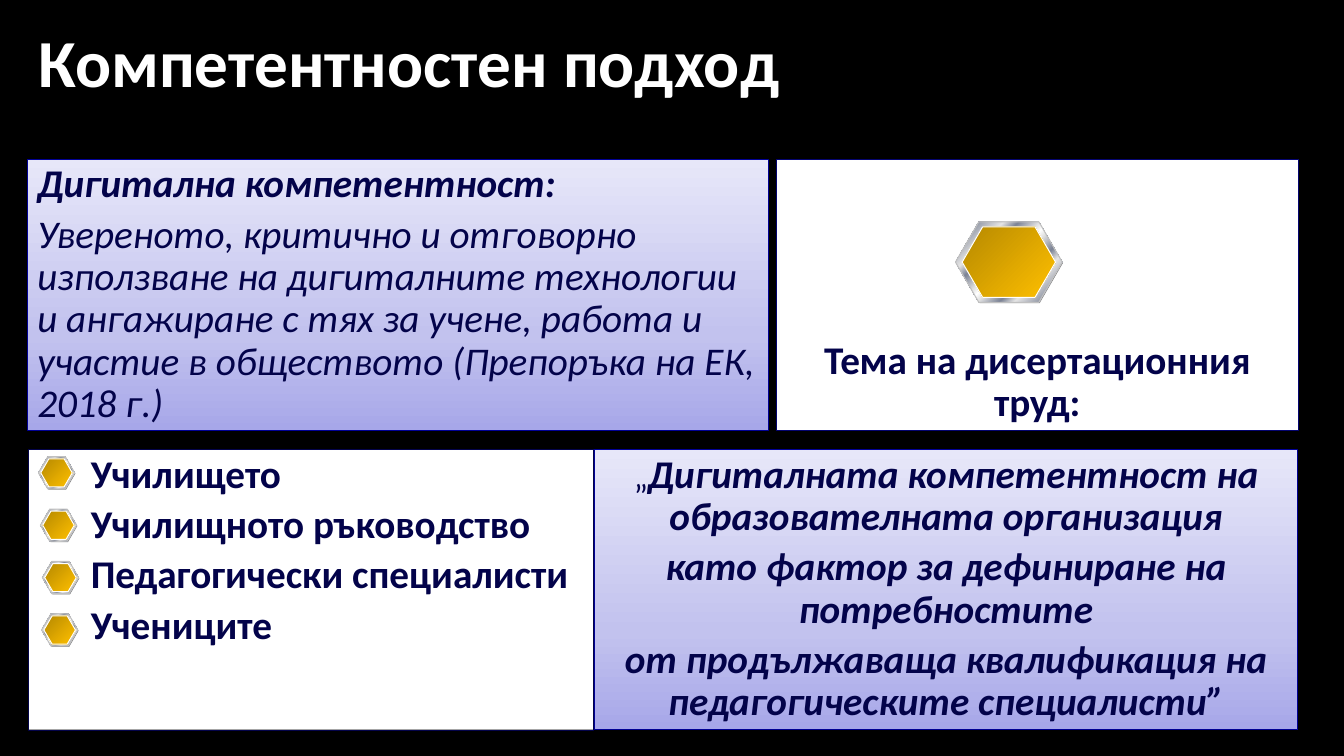
from lxml import etree
from pptx import Presentation
from pptx.dml.color import RGBColor
from pptx.enum.shapes import MSO_SHAPE
from pptx.enum.text import MSO_ANCHOR, PP_ALIGN
from pptx.oxml.ns import qn
from pptx.util import Cm, Pt

RECTANGLE, HEXAGON = MSO_SHAPE.RECTANGLE, MSO_SHAPE.HEXAGON
TOP, BOTTOM = MSO_ANCHOR.TOP, MSO_ANCHOR.BOTTOM
LEFT, CENTER = PP_ALIGN.LEFT, PP_ALIGN.CENTER

FONT = "Calibri"
COLORS = {
    "black": "000000", "white": "FFFFFF", "text": "03034A",
    "lilac_edge": "010195", "theme_edge": "040470",
    "rim_edge": "C0C0C0", "rim_shade": "808080",
}
# Gradient stops: (position in percent, colour)
LILAC = [(0, "A7A7E9"), (35, "C2C2EE"), (100, "E7E7F9")]
GOLD = [(0, "B68900"), (100, "FFC000")]
SILVER = [(0, "E6E6E6"), (8, "7D8496"), (26, "E6E6E6"), (34, "7D8496"),
          (46, "E6E6E6"), (50, "FFFFFF"), (54, "E6E6E6"), (66, "7D8496"),
          (74, "E6E6E6"), (92, "7D8496"), (100, "E6E6E6")]


def rgb(name):
    return RGBColor.from_string(COLORS[name])


def add_color(parent, value):
    return etree.SubElement(parent, qn("a:srgbClr"), val=value)


def fill_gradient(shape, stops, angle):
    """Angle runs counter-clockwise, in degrees."""
    shape.fill.gradient()
    shape.fill.gradient_angle = angle
    stop_list = shape._element.spPr.find(".//" + qn("a:gsLst"))
    for stop in list(stop_list):
        stop_list.remove(stop)
    for position, color in stops:
        stop = etree.SubElement(stop_list, qn("a:gs"), pos=str(position * 1000))
        add_color(stop, color)


def add_soft_shadow(shape):
    effects = shape._element.spPr.find(qn("a:effectLst"))
    shadow = etree.SubElement(
        effects, qn("a:outerShdw"), blurRad=str(Pt(3.1)), dist=str(Pt(1.6)),
        dir="5400000", rotWithShape="0")
    etree.SubElement(add_color(shadow, COLORS["black"]), qn("a:alpha"), val="38000")


def add_outline(shape, color, width):
    shape.line.color.rgb = rgb(color)
    shape.line.width = Pt(width)


def format_font(font, size, color, bold, italic=False):
    font.name = FONT
    font.size = Pt(size)
    font.color.rgb = rgb(color)
    font.bold = bold
    font.italic = italic


def add_panel(slide, left, top, width, height, edge, edge_width, lilac=False):
    panel = slide.shapes.add_shape(
        RECTANGLE, Cm(left), Cm(top), Cm(width), Cm(height))
    panel.shadow.inherit = False
    add_outline(panel, edge, edge_width)
    if lilac:
        fill_gradient(panel, LILAC, 90)
        add_soft_shadow(panel)
    else:
        panel.fill.solid()
        panel.fill.fore_color.rgb = rgb("white")
    return panel


def write_panel(panel, paragraphs, align=LEFT, anchor=TOP):
    """Each paragraph is (text, bold, italic)."""
    frame = panel.text_frame
    frame.word_wrap = True
    frame.vertical_anchor = anchor
    for index, (text, bold, italic) in enumerate(paragraphs):
        paragraph = frame.add_paragraph() if index else frame.paragraphs[0]
        paragraph.alignment = align
        paragraph.line_spacing = 0.9
        if index:
            paragraph.space_before = Pt(5.6)
        paragraph.add_run().text = text
        format_font(paragraph.font, 28, "text", bold, italic)


def add_hexagon(group, left, top, width, height):
    hexagon = group.shapes.add_shape(
        HEXAGON, Cm(left), Cm(top), Cm(width), Cm(height))
    hexagon.adjustments[0] = 0.29
    hexagon.shadow.inherit = False
    return hexagon


def add_badge(slide, left, top, width, height):
    """Gold hexagon in a silver rim with a grey edge behind it."""
    group = slide.shapes.add_group_shape()

    shade = add_hexagon(group, left + 0.02, top + 0.02, width, height)
    shade.fill.solid()
    shade.fill.fore_color.rgb = rgb("rim_shade")
    shade.line.fill.background()

    rim = add_hexagon(group, left, top, width, height)
    fill_gradient(rim, SILVER, 315)
    add_outline(rim, "rim_edge", 0.75)

    scale = 0.875
    inset = (1 - scale) / 2
    core = add_hexagon(group, left + width * inset, top + height * inset,
                       width * scale, height * scale)
    fill_gradient(core, GOLD, 315)
    add_outline(core, "white", 0.75)


def add_title(slide, text):
    title = slide.shapes.title
    title.left, title.top = Cm(0.71), Cm(0.61)
    title.width, title.height = Cm(30.48), Cm(2.34)
    title.text_frame.text = text
    title.text_frame.vertical_anchor = TOP
    paragraph = title.text_frame.paragraphs[0]
    paragraph.alignment = LEFT
    paragraph.line_spacing = 0.9
    format_font(paragraph.font, 48, "white", True)


def main():
    deck = Presentation()
    deck.slide_width, deck.slide_height = Cm(33.87), Cm(19.05)
    slide = deck.slides.add_slide(deck.slide_layouts.get_by_name("Title Only"))
    slide.background.fill.solid()
    slide.background.fill.fore_color.rgb = rgb("black")
    add_title(slide, "Компетентностен подход")

    # Dissertation heading
    heading = add_panel(slide, 19.56, 4.01, 13.16, 6.83, "theme_edge", 0.25)
    write_panel(heading, [("Тема на дисертационния труд:", True, False)],
                CENTER, BOTTOM)

    # Dissertation topic, with a smaller plain opening quote
    topic = add_panel(slide, 14.97, 11.33, 17.74, 7.06, "lilac_edge", 0.75, True)
    write_panel(topic, [
        ("„", True, True),
        ("като фактор за дефиниране на потребностите", True, True),
        ("от продължаваща квалификация на педагогическите специалисти”", True, True),
    ], CENTER)
    opening = topic.text_frame.paragraphs[0]
    format_font(opening.runs[0].font, 24, "text", False)
    opening.add_run().text = "Дигиталната компетентност на образователната организация"

    # Participants, indented to leave room for the badges
    participants = add_panel(slide, 0.71, 11.33, 14.25, 7.06, "text", 0.25)
    participants.text_frame.margin_left = Cm(1.58)
    write_panel(participants, [(name, True, False) for name in (
        "Училището", "Училищното ръководство",
        "Педагогически специалисти", "Учениците")])

    # Definition
    definition = add_panel(slide, 0.69, 4.01, 18.67, 6.83, "lilac_edge", 0.75, True)
    write_panel(definition, [
        ("Дигитална компетентност:", True, True),
        ("Увереното, критично и отговорно използване на дигиталните технологии "
         "и ангажиране с тях за учене, работа и участие в обществото "
         "(Препоръка на ЕК, 2018 г.)", False, True),
    ])

    # Hexagon badges
    add_badge(slide, 24.08, 5.59, 2.69, 2.03)
    for row, left in enumerate((0.97, 1.02, 1.07, 1.05)):
        add_badge(slide, left, 11.51 + 1.32 * row, 0.91, 0.81)

    deck.save("out.pptx")


if __name__ == "__main__":
    main()
